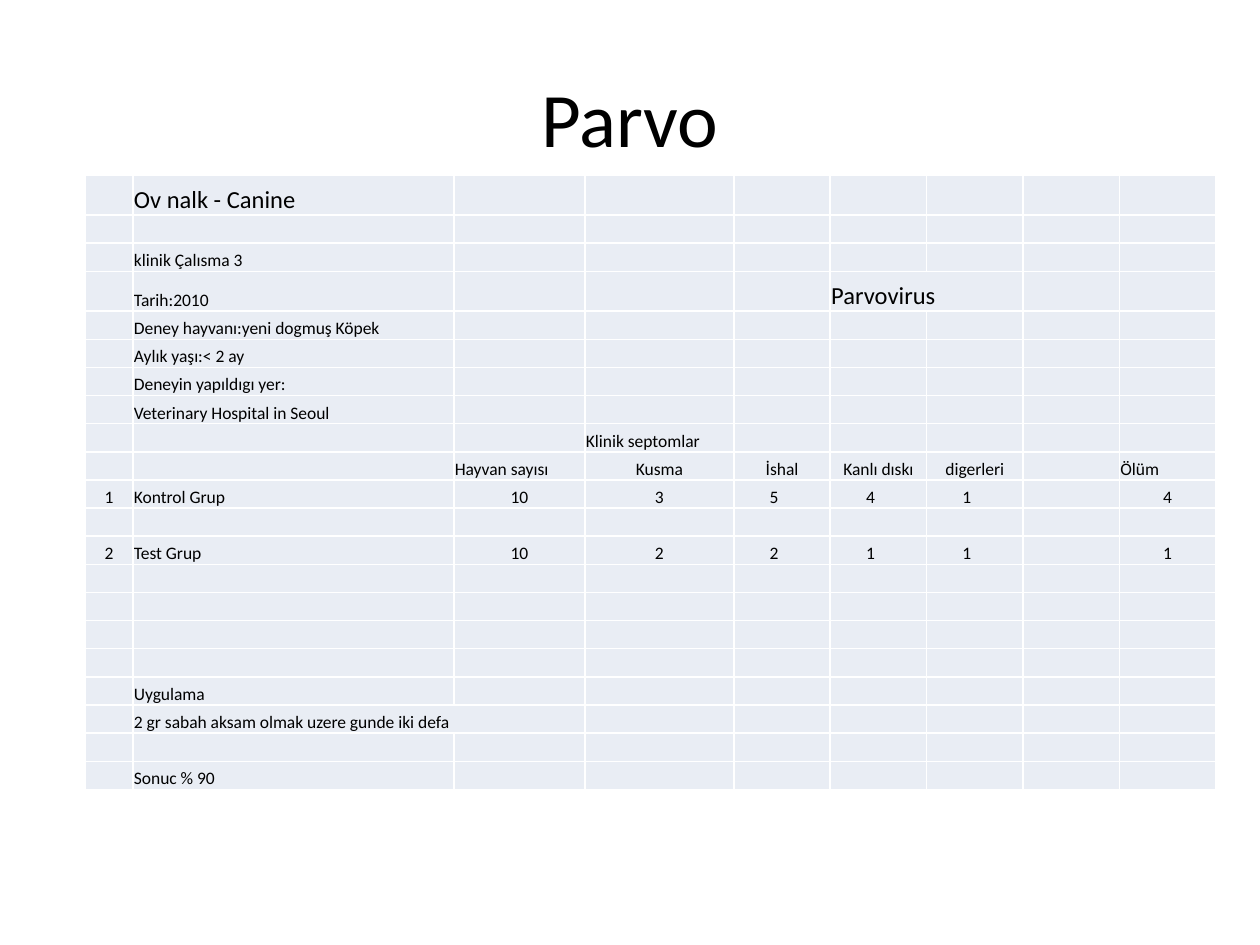
from lxml import etree
from pptx import Presentation
from pptx import util as u
from pptx.dml.color import RGBColor
from pptx.enum import text
from pptx.oxml import ns

PX = 914400 / 126
FONT = "Calibri"
BLACK, WHITE, PALE = "000000", "FFFFFF", "E9EDF4"
LEFT, CENTER = text.PP_ALIGN.LEFT, text.PP_ALIGN.CENTER
BODY_SIZE, HEADING_SIZE = 10, 14
ROW_COUNT, TALL_ROWS, TALL_HEIGHT = 21, (0, 3), 40
WIDE_COLUMNS, COLUMN_COUNT = (48, 321, 131, 149), 9
MERGES = (((3, 5), (3, 6)), ((18, 1), (18, 2)))
HEADINGS = {(0, 1): "Ov nalk - Canine", (3, 5): "Parvovirus"}
NOTES = {
    (2, 1): "klinik Çalısma 3",
    (3, 1): "Tarih:2010",
    (4, 1): "Deney hayvanı:yeni dogmuş Köpek",
    (5, 1): "Aylık yaşı:< 2 ay",
    (6, 1): "Deneyin yapıldıgı yer:",
    (7, 1): "Veterinary Hospital in Seoul",
    (8, 3): "Klinik septomlar",
    (17, 1): "Uygulama",
    (18, 1): "2 gr sabah aksam olmak uzere gunde iki defa",
    (20, 1): "Sonuc % 90",
}
RESULTS = {
    9: ("", "", "Hayvan sayısı", "Kusma", "İshal", "Kanlı dıskı", "digerleri", "", "Ölüm"),
    10: ("1", "Kontrol Grup", "10", "3", "5", "4", "1", "", "4"),
    12: ("2", "Test Grup", "10", "2", "2", "1", "1", "", "1"),
}
LEFT_RESULTS = ("Hayvan sayısı", "Ölüm", "Kontrol Grup", "Test Grup")
SHIFTED_COLUMNS, SHIFT = (4, 5, 6), 17


def px(length):
    return u.Emu(round(length * PX))


def color(value):
    return RGBColor.from_string(value)


def write(frame, content, size=BODY_SIZE, align=LEFT, fill=BLACK):
    paragraph = frame.paragraphs[0]
    paragraph.alignment = align
    run = paragraph.add_run()
    run.text = content
    run.font.size = u.Pt(size)
    run.font.name = FONT
    run.font.color.rgb = color(fill)


def add_title(slide, left, top, width, height):
    shape = slide.shapes.add_textbox(px(left), px(top), px(width), px(height))
    frame = shape.text_frame
    frame.word_wrap = True
    frame.vertical_anchor = text.MSO_ANCHOR.MIDDLE
    write(frame, "Parvo", size=44, align=CENTER)


def add_borders(cell):
    properties = cell._tc.get_or_add_tcPr()
    for index, side in enumerate(("lnL", "lnR", "lnT", "lnB")):
        line = etree.Element(ns.qn(f"a:{side}"), w=str(u.Pt(1)))
        fill = etree.SubElement(line, ns.qn("a:solidFill"))
        etree.SubElement(fill, ns.qn("a:srgbClr"), val=WHITE)
        properties.insert(index, line)


def format_cell(cell):
    cell.fill.solid()
    cell.fill.fore_color.rgb = color(PALE)
    cell.vertical_anchor = text.MSO_ANCHOR.BOTTOM
    cell.margin_left = cell.margin_right = cell.margin_top = px(1)
    cell.margin_bottom = 0
    add_borders(cell)


def set_empty_size(cell):
    paragraph = cell.text_frame.paragraphs[0]._p
    etree.SubElement(paragraph, ns.qn("a:endParaRPr"), sz=str(BODY_SIZE * 100))


def fill_results(table):
    for row, values in RESULTS.items():
        for column, value in enumerate(values):
            if not value:
                continue
            cell = table.cell(row, column)
            align = LEFT if value in LEFT_RESULTS else CENTER
            write(cell.text_frame, value, align=align)
            if column in SHIFTED_COLUMNS and value.isdigit():
                cell.margin_right = px(SHIFT)


def add_study_table(slide, left, top, width, height):
    shape = slide.shapes.add_table(
        ROW_COUNT, COLUMN_COUNT, px(left), px(top), px(width), px(height))
    table = shape.table
    table.first_row = table.horz_banding = False

    narrow = (width - sum(WIDE_COLUMNS)) / (COLUMN_COUNT - len(WIDE_COLUMNS))
    for index, column in enumerate(table.columns):
        column.width = px(WIDE_COLUMNS[index] if index < len(WIDE_COLUMNS) else narrow)
    short = (height - TALL_HEIGHT * len(TALL_ROWS)) / (ROW_COUNT - len(TALL_ROWS))
    for index, row in enumerate(table.rows):
        row.height = px(TALL_HEIGHT if index in TALL_ROWS else short)

    for cell in table.iter_cells():
        format_cell(cell)
    for first, last in MERGES:
        table.cell(*first).merge(table.cell(*last))
    for place, content in HEADINGS.items():
        write(table.cell(*place).text_frame, content, size=HEADING_SIZE)
    for place, content in NOTES.items():
        write(table.cell(*place).text_frame, content)
    fill_results(table)
    for cell in table.iter_cells():
        if not cell.text_frame.text:
            set_empty_size(cell)


def main():
    presentation = Presentation()
    presentation.slide_width, presentation.slide_height = px(1260), px(945)
    slide = presentation.slides.add_slide(presentation.slide_layouts[6])
    add_title(slide, 63, 38, 1134, 158)
    add_study_table(slide, 85, 175, 1131, 615)
    presentation.save("out.pptx")


if __name__ == "__main__":
    main()
